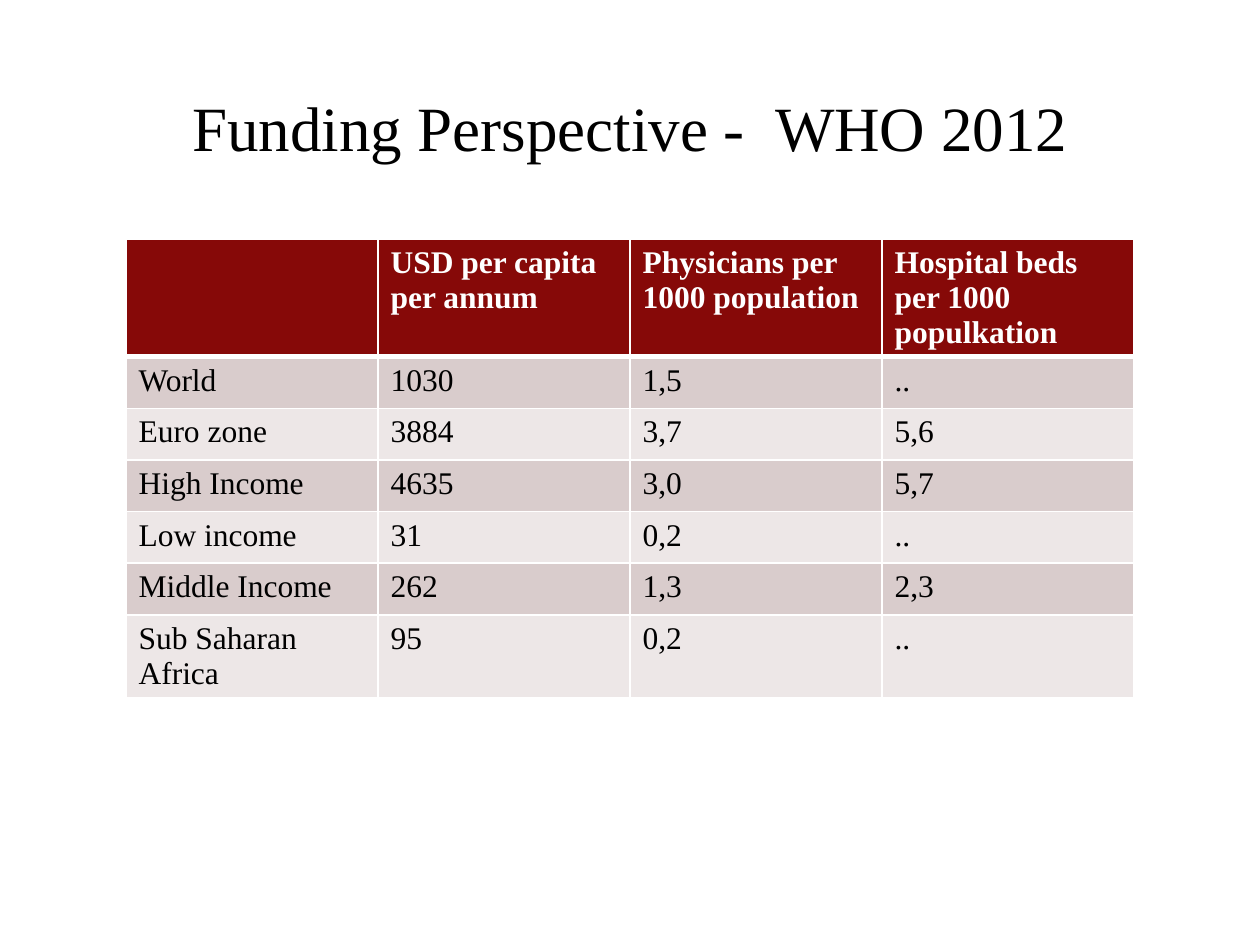
from lxml.etree import SubElement
from pptx import Presentation
from pptx.dml.color import RGBColor
from pptx.enum.text import MSO_ANCHOR, PP_ALIGN
from pptx.oxml.ns import qn
from pptx.util import Inches, Pt

TITLE = "Funding Perspective -  WHO 2012"
ROWS = [
    ["", "USD per capita\nper annum", "Physicians per\n1000 population",
     "Hospital beds per 1000 populkation"],
    ["World", "1030", "1,5", ".."],
    ["Euro zone", "3884", "3,7", "5,6"],
    ["High Income", "4635", "3,0", "5,7"],
    ["Low income", "31", "0,2", ".."],
    ["Middle Income", "262", "1,3", "2,3"],
    ["Sub Saharan Africa", "95", "0,2", ".."],
]
FONT = "Times New Roman"
BLACK, WHITE, RED = "000000", "FFFFFF", "860908"
BANDS = ["EDE7E7", "D9CCCC"]


def color(code):
    return RGBColor.from_string(code)


def write(frame, text, size=18, ink=BLACK, bold=False, align=PP_ALIGN.LEFT):
    frame.text = text
    for para in frame.paragraphs:
        para.alignment = align
        font = para.font
        font.name, font.size, font.bold = FONT, Pt(size), bold
        font.color.rgb = color(ink)
        for run in para.runs:
            run.font.name = FONT


def edge(cell, **widths):
    """Draw white borders; widths are points by side, in the order L, R, T, B."""
    props = cell._tc.get_or_add_tcPr()
    for side, width in widths.items():
        line = SubElement(props, qn(f"a:ln{side}"), w=str(Pt(width)))
        fill = SubElement(line, qn("a:solidFill"))
        SubElement(fill, qn("a:srgbClr"), val=WHITE)


deck = Presentation()
deck.slide_width, deck.slide_height = Inches(10), Inches(7.5)
slide = deck.slides.add_slide(deck.slide_layouts[5])

title = slide.shapes.title
title.left, title.top = Inches(1), Inches(0.53)
title.width, title.height = Inches(8), Inches(0.95)
write(title.text_frame, TITLE, size=36, align=PP_ALIGN.CENTER)
title.text_frame.vertical_anchor = MSO_ANCHOR.MIDDLE

frame = slide.shapes.add_table(len(ROWS), len(ROWS[0]), Inches(1), Inches(1.9),
                               Inches(8), Inches(3.73))
table = frame.table
for r, row in enumerate(ROWS):
    table.rows[r].height = Inches(0.41)
    head = r == 0
    for c, text in enumerate(row):
        cell = table.cell(r, c)
        write(cell.text_frame, text, ink=WHITE if head else BLACK, bold=head)
        edge(cell, L=1, R=1, T=3 if r == 1 else 1, B=3 if head else 1)
        cell.fill.solid()
        cell.fill.fore_color.rgb = color(RED if head else BANDS[r % 2])
frame.height = Inches(3.73)

deck.save("out.pptx")
